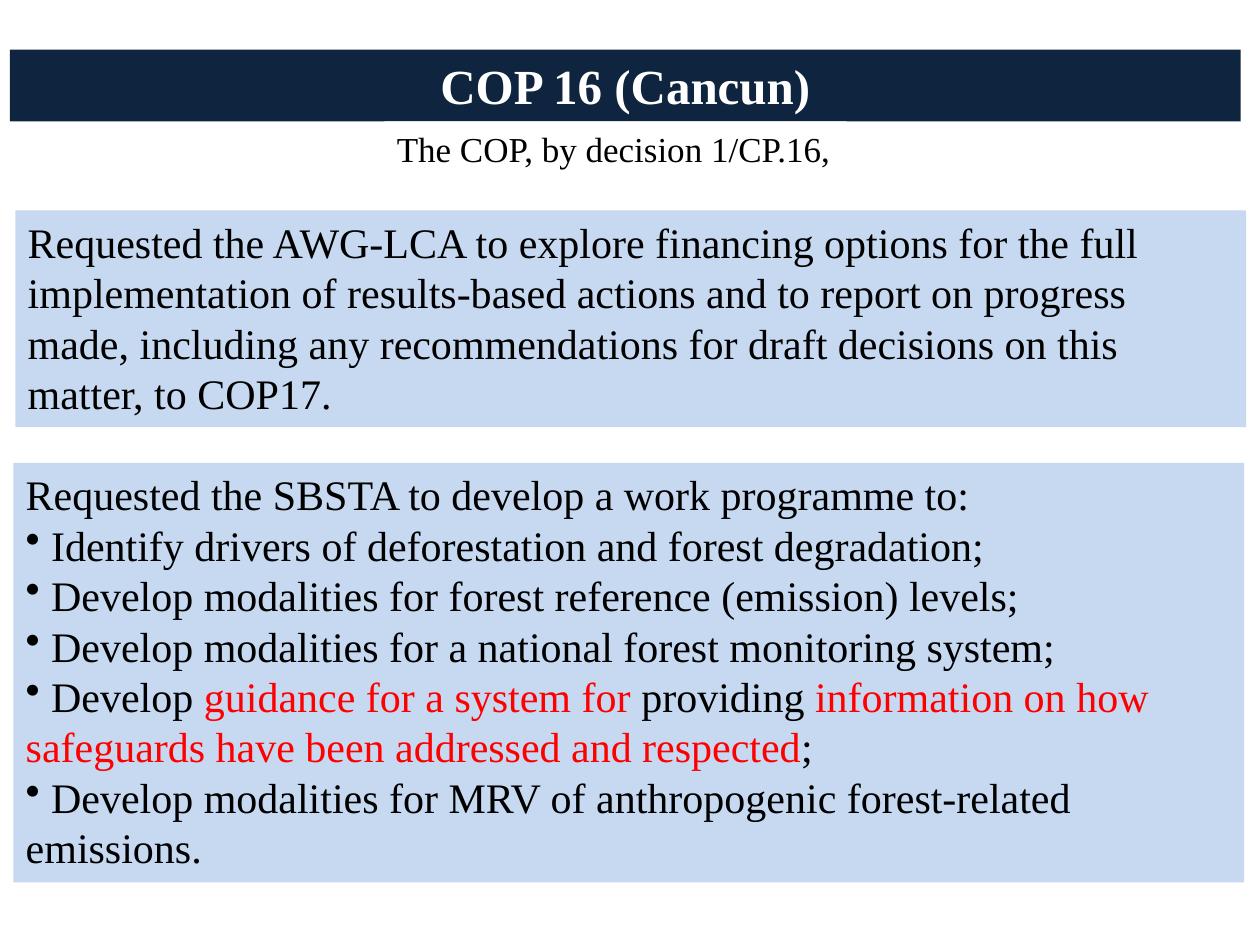
import lxml.etree
import pptx
import pptx.dml.color
import pptx.enum.text
import pptx.oxml.ns
import pptx.util
from pptx.util import Cm

FONT = "Times New Roman"
NAVY, PALE, WHITE, BLACK, RED = "0F243E", "C6D9F1", "FFFFFF", "000000", "FF0000"
LEFT = pptx.enum.text.PP_ALIGN.LEFT
CENTER = pptx.enum.text.PP_ALIGN.CENTER


def colour(value):
    """Turn a hex string into a colour."""
    return pptx.dml.color.RGBColor.from_string(value)


def add_text(para, text, size=24, color=BLACK, bold=False):
    """Append one formatted span to a paragraph."""
    span = para.add_run()
    span.text = text
    span.font.name = FONT
    span.font.size = pptx.util.Pt(size)
    span.font.bold = bold
    span.font.color.rgb = colour(color)


def add_bullet(para):
    """Give a paragraph a round bullet."""
    tag = pptx.oxml.ns.qn("a:buChar")
    lxml.etree.SubElement(para._p.get_or_add_pPr(), tag).set("char", "•")


def add_panel(page, left, top, width, height, fill, wrap=True):
    """Place a filled text box and return its text frame."""
    box = page.shapes.add_textbox(Cm(left), Cm(top), Cm(width), Cm(height))
    box.fill.solid()
    box.fill.fore_color.rgb = colour(fill)
    box.text_frame.word_wrap = wrap
    box.text_frame.auto_size = pptx.enum.text.MSO_AUTO_SIZE.SHAPE_TO_FIT_TEXT
    return box.text_frame


def add_line(frame, text, align=LEFT, **style):
    """Write a single line of text into a frame."""
    para = frame.paragraphs[0]
    para.alignment = align
    add_text(para, text, **style)


def add_heading(page, left, top, width):
    """Place the title band and the decision line below it."""
    band = add_panel(page, left, top, width, 1.45, NAVY)
    add_line(band, "COP 16 (Cancun)", CENTER, size=28, color=WHITE, bold=True)
    decision = add_panel(page, left + 7.55, top + 1.45, 9.32, 1.12, WHITE, wrap=False)
    add_line(decision, "The COP, by decision 1/CP.16,", size=20)


def add_requests(page, left, top, width, height, paragraphs):
    """Place a pale panel of paragraphs, each a bullet flag and its spans."""
    frame = add_panel(page, left, top, width, height, PALE)
    for index, (bulleted, spans) in enumerate(paragraphs):
        para = frame.add_paragraph() if index else frame.paragraphs[0]
        if bulleted:
            add_bullet(para)
        for text, color in spans:
            add_text(para, text, color=color)


FINANCING = [
    (False, [("Requested the AWG-LCA to explore financing options for the full "
              "implementation of results-based actions and to report on progress "
              "made, including any recommendations for draft decisions on this", BLACK)]),
    (False, [("matter, to COP17.", BLACK)]),
]

PROGRAMME = [
    (False, [("Requested the SBSTA to develop a work programme to:", BLACK)]),
    (True, [(" Identify drivers of deforestation and forest degradation;", BLACK)]),
    (True, [(" Develop modalities for forest reference (emission) levels;", BLACK)]),
    (True, [(" Develop modalities for a national forest monitoring system;", BLACK)]),
    (True, [(" Develop ", BLACK), ("guidance for a system for ", RED),
            ("providing ", BLACK), ("information on how", RED)]),
    (False, [("safeguards have been addressed and respected", RED), (";", BLACK)]),
    (True, [(" Develop modalities for MRV of anthropogenic forest-related emissions.", BLACK)]),
]


def main():
    """Build and save the deck."""
    deck = pptx.Presentation()
    deck.slide_width, deck.slide_height = Cm(25.4), Cm(19.05)
    page = deck.slides.add_slide(deck.slide_layouts[6])
    width = 24.81
    add_heading(page, 0.2, 1, width)
    add_requests(page, 0.31, 4.24, width, 4.37, FINANCING)
    add_requests(page, 0.27, 9.33, width, 8.46, PROGRAMME)
    deck.save("out.pptx")


if __name__ == "__main__":
    main()
